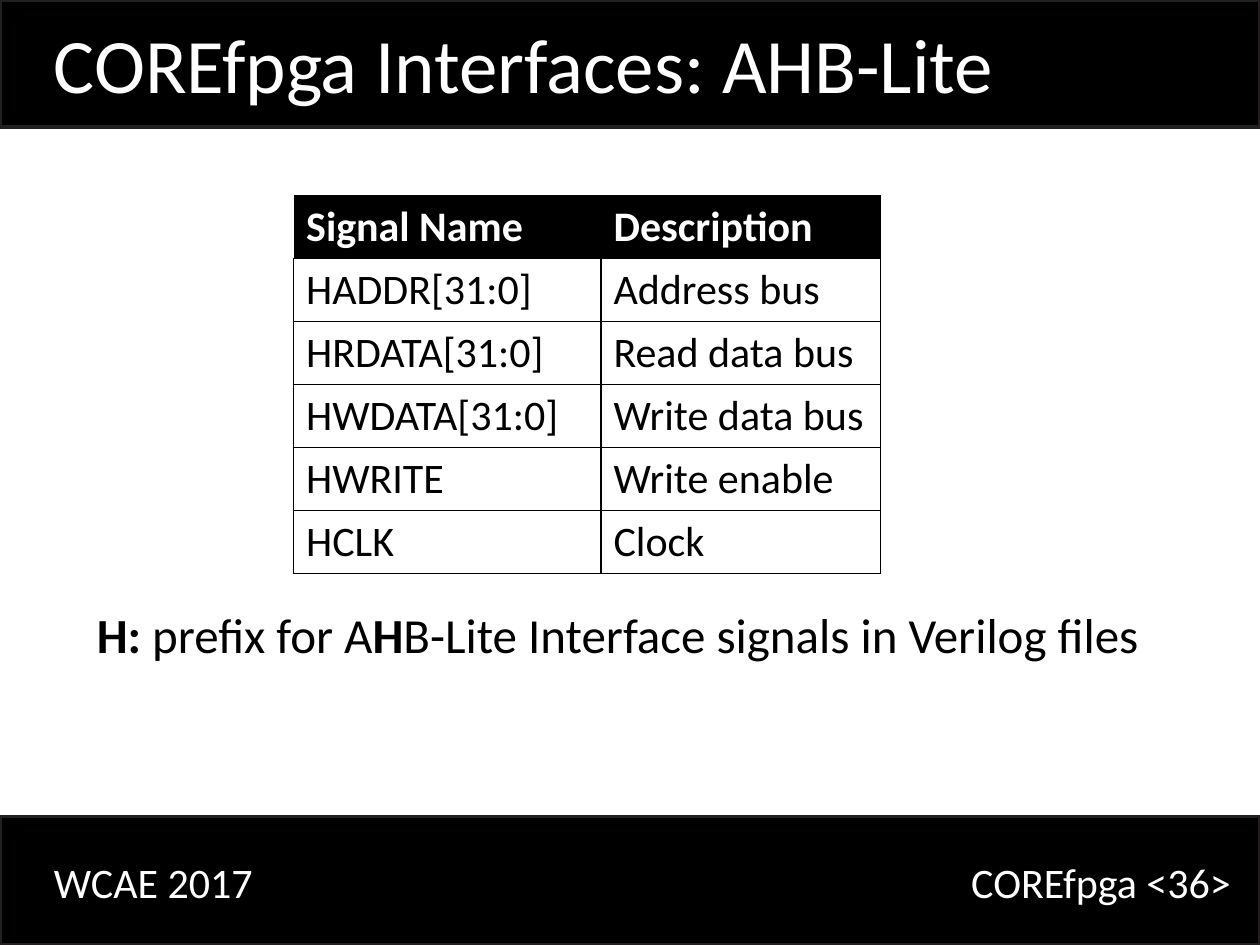
from dataclasses import dataclass

from lxml import etree
from pptx import Presentation
from pptx.dml.color import RGBColor
from pptx.enum.shapes import MSO_SHAPE
from pptx.enum.text import MSO_ANCHOR
from pptx.oxml.ns import qn
from pptx.util import Inches, Pt

RECTANGLE = MSO_SHAPE.RECTANGLE
TOP = MSO_ANCHOR.TOP


@dataclass(frozen=True)
class Theme:
    font: str = "Calibri"
    black: str = "000000"
    white: str = "FFFFFF"
    bar_line: str = "231F20"
    title_size: int = 44
    note_size: int = 28
    body_size: int = 24


@dataclass(frozen=True)
class Bar:
    top: float
    height: float


@dataclass(frozen=True)
class Label:
    left: float
    top: float
    width: float
    height: float
    spans: tuple[tuple[str, bool], ...]
    size: int
    color: str


THEME = Theme()
PAGE_WIDTH, PAGE_HEIGHT = 10, 7.5
BARS = (Bar(6.48, 1.02), Bar(0, 1.01))
LABELS = (
    Label(7.61, 6.75, 2.81, 0.5, (("COREfpga <36>", False),), THEME.body_size, THEME.white),
    Label(0.33, 6.75, 7.19, 0.5, (("WCAE 2017", False),), THEME.body_size, THEME.white),
    Label(0.33, 0.08, 8.67, 0.84, (("COREfpga Interfaces: AHB-Lite", False),),
          THEME.title_size, THEME.white),
    Label(0.67, 4.75, 8.58, 0.57,
          (("H:", True), (" prefix for A", False), ("H", True),
           ("B-Lite Interface signals in Verilog files", False)),
          THEME.note_size, THEME.black),
)
SIGNALS = (
    ("Signal Name", "Description"),
    ("HADDR[31:0]", "Address bus"),
    ("HRDATA[31:0]", "Read data bus"),
    ("HWDATA[31:0]", "Write data bus"),
    ("HWRITE", "Write enable"),
    ("HCLK", "Clock"),
)
TABLE_LEFT, TABLE_TOP, ROW_HEIGHT = 2.33, 1.55, 0.5
COLUMN_WIDTHS = (2.44, 2.22)


def add_text(para, text: str, *, size: int, color: str, bold: bool = False) -> None:
    span = para.add_run()
    span.text = text
    span.font.name = THEME.font
    span.font.size = Pt(size)
    span.font.bold = bold
    span.font.color.rgb = RGBColor.from_string(color)


def draw_bar(page, bar: Bar) -> None:
    shape = page.shapes.add_shape(
        RECTANGLE, Inches(0), Inches(bar.top), Inches(PAGE_WIDTH), Inches(bar.height))
    shape.shadow.inherit = False
    shape.fill.solid()
    shape.fill.fore_color.rgb = RGBColor.from_string(THEME.black)
    shape.line.color.rgb = RGBColor.from_string(THEME.bar_line)
    shape.line.width = Pt(2)


def draw_label(page, label: Label) -> None:
    box = page.shapes.add_textbox(
        Inches(label.left), Inches(label.top), Inches(label.width), Inches(label.height))
    frame = box.text_frame
    frame.word_wrap = True
    frame.vertical_anchor = TOP
    for text, bold in label.spans:
        add_text(frame.paragraphs[0], text, size=label.size, color=label.color, bold=bold)


def set_borders(cell, visible: bool) -> None:
    properties = cell._tc.get_or_add_tcPr()
    for position, side in enumerate(("lnL", "lnR", "lnT", "lnB")):
        line = etree.Element(qn(f"a:{side}"), w=str(Pt(1)))
        if visible:
            fill = etree.SubElement(line, qn("a:solidFill"))
            etree.SubElement(fill, qn("a:srgbClr"), val=THEME.black)
        else:
            etree.SubElement(line, qn("a:noFill"))
        properties.insert(position, line)


def draw_signal_table(page) -> None:
    table = page.shapes.add_table(
        len(SIGNALS), len(COLUMN_WIDTHS), Inches(TABLE_LEFT), Inches(TABLE_TOP),
        Inches(sum(COLUMN_WIDTHS)), Inches(ROW_HEIGHT * len(SIGNALS))).table
    table.horz_banding = False
    for column, width in zip(table.columns, COLUMN_WIDTHS):
        column.width = Inches(width)
    for row_index, texts in enumerate(SIGNALS):
        header = row_index == 0
        table.rows[row_index].height = Inches(ROW_HEIGHT)
        for column_index, text in enumerate(texts):
            cell = table.cell(row_index, column_index)
            cell.fill.solid()
            cell.fill.fore_color.rgb = RGBColor.from_string(
                THEME.black if header else THEME.white)
            set_borders(cell, visible=not header)
            add_text(cell.text_frame.paragraphs[0], text, size=THEME.body_size,
                     color=THEME.white if header else THEME.black, bold=header)


def main() -> None:
    deck = Presentation()
    deck.slide_width = Inches(PAGE_WIDTH)
    deck.slide_height = Inches(PAGE_HEIGHT)
    page = deck.slides.add_slide(deck.slide_layouts[6])
    for bar in BARS:
        draw_bar(page, bar)
    for label in LABELS:
        draw_label(page, label)
    draw_signal_table(page)
    deck.save("out.pptx")


if __name__ == "__main__":
    main()
